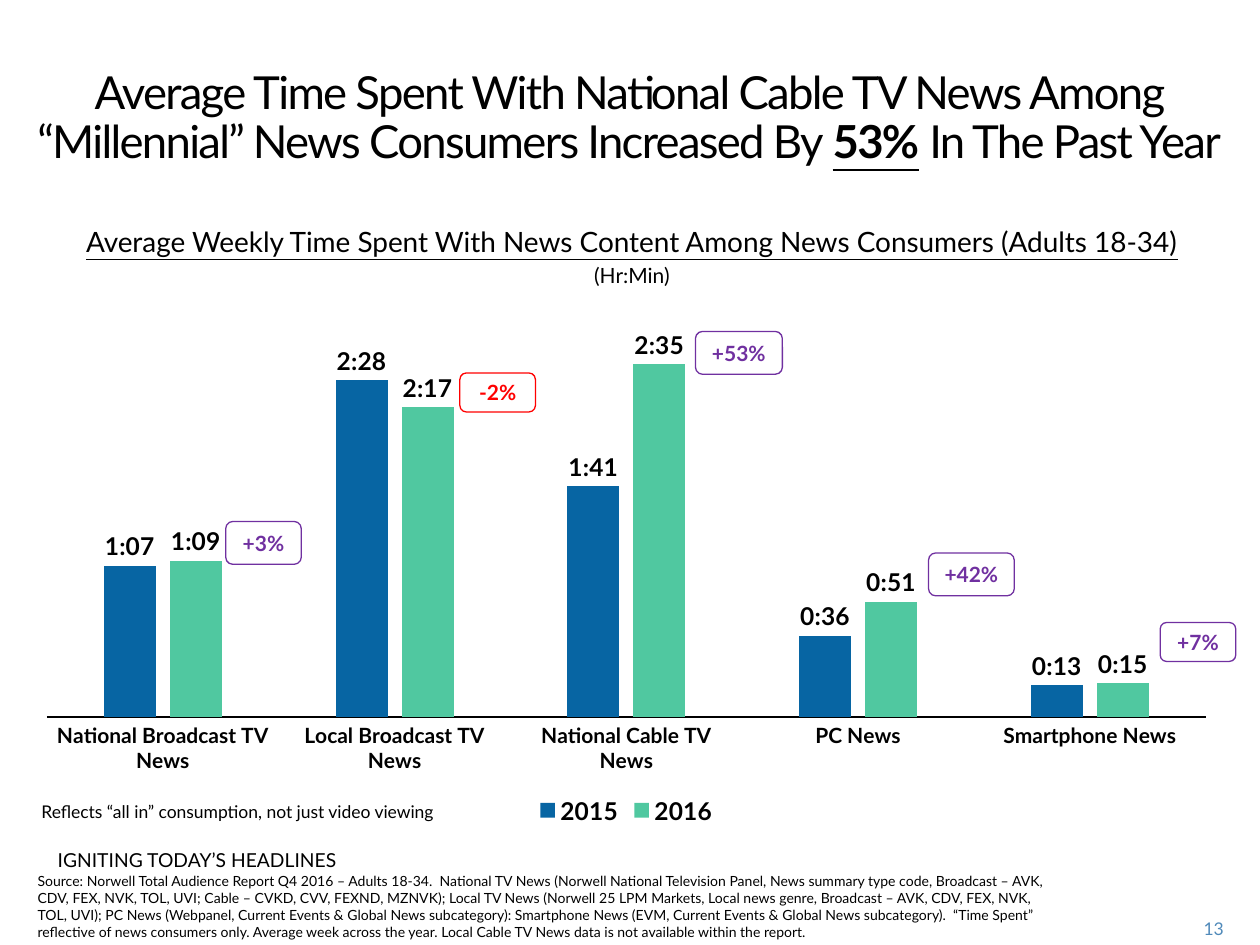
from lxml import etree
from pptx import Presentation
from pptx.chart.data import CategoryChartData
from pptx.dml.color import RGBColor
from pptx.enum import chart as ch, shapes, text
from pptx.oxml import parse_xml
from pptx.oxml.ns import nsdecls
from pptx.util import Pt

BLACK = RGBColor(0, 0, 0)
BLUE = RGBColor(0x07, 0x65, 0xA3)
GREEN = RGBColor(0x50, 0xC8, 0xA0)
PURPLE = RGBColor(0x70, 0x30, 0xA0)
RED = RGBColor(0xFF, 0, 0)
PALE = RGBColor(0x50, 0x8A, 0xBA)
LEFT, MID, RIGHT = (text.PP_ALIGN.LEFT, text.PP_ALIGN.CENTER,
                    text.PP_ALIGN.RIGHT)

GROUPS = ["National Broadcast TV News", "Local Broadcast TV News",
          "National Cable TV News", "PC News", "Smartphone News"]
TIMES = [("2015", BLUE, ["1:07", "2:29", "1:42", "0:36", "0:14"]),
         ("2016", GREEN, ["1:09", "2:17", "2:36", "0:51", "0:15"])]
# Label, colour, and box of each yearly change
CHANGES = [("+3%", PURPLE, (129, 298, 43.2, 24.5)),
           ("-2%", RED, (262.8, 213.1, 43.2, 22.3)),
           ("+53%", PURPLE, (397.4, 189.4, 49.7, 24.5)),
           ("+42%", PURPLE, (530.6, 316, 49, 24.5)),
           ("+7%", PURPLE, (663, 355.7, 43.2, 22.3))]
HEAD = [("Average Time Spent With National Cable TV News Among “Millennial” "
         "News Consumers Increased By ", {}),
        ("53%", {"bold": True, "underline": True}),
        (" In The Past Year", {})]
SOURCE = (
    "Source: Norwell Total Audience Report Q4 2016 – Adults 18-34.  National "
    "TV News (Norwell National Television Panel, News summary type code, "
    "Broadcast – AVK, CDV, FEX, NVK, TOL, UVI; Cable – CVKD, CVV, FEXND, "
    "MZNVK); Local TV News (Norwell 25 LPM Markets, Local news genre, "
    "Broadcast – AVK, CDV, FEX, NVK, TOL, UVI); PC News (Webpanel, Current "
    "Events & Global News subcategory): Smartphone News (EVM, Current Events "
    "& Global News subcategory).  “Time Spent” reflective of news consumers "
    "only. Average week across the year. Local Cable TV News data is not "
    "available within the report.")


def points(box):
    return [Pt(n) for n in box]


def style(font, size, color=BLACK, **more):
    font.color.rgb = color
    for key, val in {"name": "Lato", "size": Pt(size), **more}.items():
        setattr(font, key, val)


def add_text(slide, box, words, size, color=BLACK, align=LEFT):
    frame = slide.shapes.add_textbox(*points(box)).text_frame
    frame.word_wrap = True
    para = frame.paragraphs[0]
    para.alignment = align
    if words:
        add_run(para, words, size, color)
    return frame


def add_run(para, words, size, color=BLACK, **more):
    run = para.add_run()
    run.text = words
    style(run.font, size, color, **more)
    return run


def add_title(slide, box):
    para = add_text(slide, box, "", 26, align=MID).paragraphs[0]
    para.line_spacing = Pt(28)
    for words, form in HEAD:
        run = add_run(para, words, 26, **form)
        run.font._element.set("spc", "-100")


def add_subtitle(slide, box):
    frame = add_text(slide, box, "", 16, align=MID)
    add_run(frame.paragraphs[0], "Average Weekly Time Spent With News Content "
            "Among News Consumers (Adults 18-34)", 16, underline=True)
    unit = frame.add_paragraph()
    unit.alignment, unit.space_before = MID, Pt(2.4)
    add_run(unit, "(Hr:Min)", 12)


def to_day(clock):
    """Turn h:mm into a fraction of a day."""
    hour, mins = clock.split(":")
    return round((int(hour) * 60 + int(mins)) / 1440, 6)


def set_area(chart, **sides):
    """Fix the inner plot area, as fractions of the chart."""
    plot = chart._chartSpace.chart.plotArea
    for old in plot.findall("{*}layout"):
        plot.remove(old)
    area = parse_xml(f"<c:layout {nsdecls('c')}><c:manualLayout/></c:layout>")
    vals = {"layoutTarget": "inner", "xMode": "edge", "yMode": "edge", **sides}
    for key, val in vals.items():
        tag = etree.QName(area).namespace
        etree.SubElement(area[0], f"{{{tag}}}{key}").set("val", str(val))
    plot.insert(0, area)


def add_bars(slide, box):
    data = CategoryChartData(number_format="h:mm")
    data.categories = GROUPS
    for name, _, clocks in TIMES:
        data.add_series(name, [to_day(c) for c in clocks])
    chart = slide.shapes.add_chart(
        ch.XL_CHART_TYPE.COLUMN_CLUSTERED, *points(box), data).chart
    style(chart.font, 10)
    chart.has_title = False
    chart.has_legend = True
    chart.legend.position = ch.XL_LEGEND_POSITION.BOTTOM
    chart.legend.include_in_layout = False
    style(chart.legend.font, 14, bold=True)

    axis = chart.category_axis
    axis.major_tick_mark = ch.XL_TICK_MARK.NONE
    axis.format.line.color.rgb = BLACK
    axis.format.line.width = Pt(0.75)
    style(axis.tick_labels.font, 12, bold=True)
    scale = chart.value_axis
    for key, val in {"visible": False, "has_major_gridlines": False,
                     "minimum_scale": 0, "maximum_scale": 0.12}.items():
        setattr(scale, key, val)

    plot = chart.plots[0]
    plot.gap_width, plot.overlap = 219, -27
    plot.vary_by_categories = False
    for series, (_, color, _) in zip(plot.series, TIMES):
        series.format.fill.solid()
        series.format.fill.fore_color.rgb = color
        labels = series.data_labels
        for key, val in {"show_value": True, "number_format": "h:mm",
                         "number_format_is_linked": False,
                         "position": ch.XL_LABEL_POSITION.OUTSIDE_END}.items():
            setattr(labels, key, val)
        style(labels.font, 14, bold=True)
    set_area(chart, x=0.02, y=0.02, w=0.96, h=0.76)


def add_badge(slide, box, words, color):
    badge = slide.shapes.add_shape(
        shapes.MSO_SHAPE.ROUNDED_RECTANGLE, *points(box))
    badge.shadow.inherit = False
    badge.fill.background()
    badge.line.color.rgb = color
    badge.line.width = Pt(0.75)
    frame = badge.text_frame
    frame.vertical_anchor = text.MSO_ANCHOR.MIDDLE
    frame.paragraphs[0].alignment = MID
    add_run(frame.paragraphs[0], words, 12, color, bold=True)


def add_notes(slide, left, top):
    """Place the remark, the tag line and the source below the chart."""
    add_text(slide, (left + 2.2, top, 263.5, 20),
             "Reflects “all in” consumption, not just video viewing", 10)
    add_text(slide, (left + 11.5, top + 26.7, 196, 34),
             "IGNITING TODAY’S HEADLINES", 11)
    add_text(slide, (left, top + 41, 593.3, 43), SOURCE, 8)


def main():
    deck = Presentation()
    deck.slide_width, deck.slide_height = Pt(720), Pt(540)
    slide = deck.slides.add_slide(deck.slide_layouts[6])
    add_text(slide, (662.4, 521.3, 44, 18), "13", 10, PALE, RIGHT)
    add_bars(slide, (13, 180.7, 689.8, 293.8))
    for words, color, box in CHANGES:
        add_badge(slide, box, words, color)
    add_subtitle(slide, (14.4, 124.6, 693.4, 49.7))
    add_title(slide, (10, 36, 699, 70.6))
    add_notes(slide, 14.4, 454.3)
    deck.save("out.pptx")


if __name__ == "__main__":
    main()
